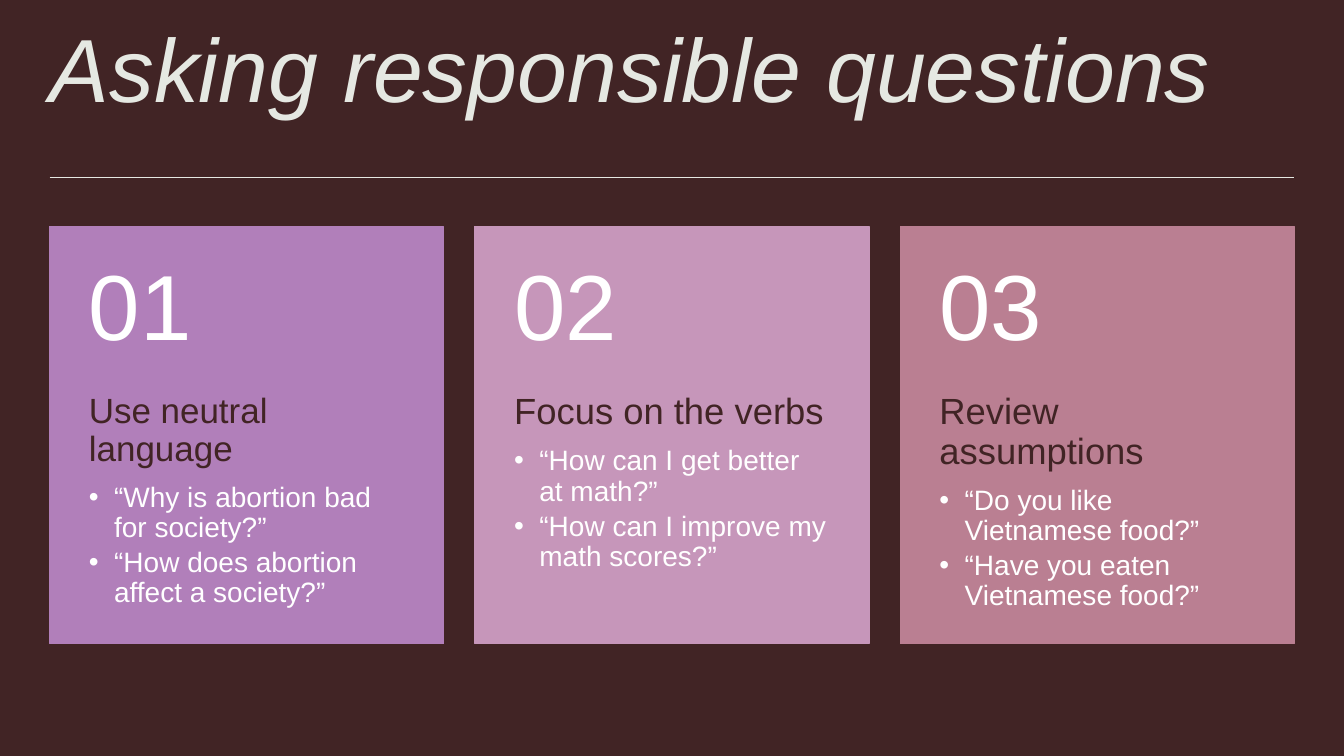
from lxml.etree import SubElement
from pptx import Presentation
from pptx.dml.color import RGBColor
from pptx.enum.shapes import MSO_CONNECTOR, MSO_SHAPE
from pptx.enum.text import MSO_ANCHOR, MSO_AUTO_SIZE, PP_ALIGN
from pptx.oxml.ns import qn
from pptx.util import Pt

# Content
TITLE = "Asking responsible questions"
CARDS = [
    {"number": "01", "heading": "Use neutral language", "heading_size": 25, "fill": "B17FBA",
     "questions": ["“Why is abortion bad for society?”",
                   "“How does abortion affect a society?”"]},
    {"number": "02", "heading": "Focus on the verbs", "heading_size": 26, "fill": "C696BA",
     "questions": ["“How can I get better at math?”",
                   "“How can I improve my math scores?”"]},
    {"number": "03", "heading": "Review assumptions", "heading_size": 26, "fill": "BA7F92",
     "questions": ["“Do you like Vietnamese food?”",
                   "“Have you eaten Vietnamese food?”"]},
]

# Theme
THEME = {"font": "Arial", "dark": "412425", "pale": "E5E8E2", "white": "FFFFFF",
         "title": 64, "number": 66, "question": 20}

# Layout, in points
SLIDE_W, SLIDE_H = 960, 540
LEFT, RIGHT = 35.5, 924.5
TITLE_TOP, TITLE_H, RULE_Y = 18, 78, 126.7
CARD_TOP, CARD_W, CARD_H, NUMBER_H = 162, 281.5, 298, 119
CARD_STEP = (RIGHT - LEFT - CARD_W) / (len(CARDS) - 1)
INSET, BULLET_INDENT = 28, 18


def color(value):
    return RGBColor.from_string(value)


def place(shape, left, top, width, height):
    for name, value in {"left": left, "top": top, "width": width, "height": height}.items():
        setattr(shape, name, Pt(value))


def set_frame(shape, anchor, left=0, top=0, right=0, bottom=0):
    frame = shape.text_frame
    formats = {"word_wrap": True, "auto_size": MSO_AUTO_SIZE.NONE, "vertical_anchor": anchor,
               "margin_left": Pt(left), "margin_top": Pt(top),
               "margin_right": Pt(right), "margin_bottom": Pt(bottom)}
    for name, value in formats.items():
        setattr(frame, name, value)
    return frame


def write(paragraph, text, size, ink, after=0, italic=False, bullet=False):
    spacing = {"alignment": PP_ALIGN.LEFT, "line_spacing": 0.9,
               "space_before": Pt(0), "space_after": Pt(after)}
    for name, value in spacing.items():
        setattr(paragraph, name, value)
    run = paragraph.add_run()
    run.text = text
    look = {"name": THEME["font"], "size": Pt(size), "bold": False, "italic": italic}
    for name, value in look.items():
        setattr(run.font, name, value)
    run.font.color.rgb = color(ink)

    # Bullet and hanging indent
    properties = paragraph._p.get_or_add_pPr()
    indent = Pt(BULLET_INDENT) if bullet else 0
    properties.set("marL", str(indent))
    properties.set("indent", str(-indent))
    if bullet:
        SubElement(properties, qn("a:buFont"), typeface=THEME["font"])
        SubElement(properties, qn("a:buChar"), char="•")
    else:
        SubElement(properties, qn("a:buNone"))


def add_card(slide, body, card, left):
    # Panel, with the list placeholder brought in front of it
    panel = slide.shapes.add_shape(MSO_SHAPE.RECTANGLE, Pt(left), Pt(CARD_TOP),
                                   Pt(CARD_W), Pt(CARD_H))
    panel.shadow.inherit = False
    panel.fill.solid()
    panel.fill.fore_color.rgb = color(card["fill"])
    panel.line.color.rgb = color(card["fill"])
    panel.line.width = Pt(0.75)
    panel.element.addnext(body.element)

    # Heading and questions
    place(body, left, CARD_TOP + NUMBER_H, CARD_W, CARD_H - NUMBER_H)
    frame = set_frame(body, MSO_ANCHOR.TOP, left=INSET, right=INSET, bottom=26)
    write(frame.paragraphs[0], card["heading"], card["heading_size"], THEME["dark"], after=10)
    for question in card["questions"]:
        write(frame.add_paragraph(), question, THEME["question"], THEME["white"],
              after=3.5, bullet=True)

    # Number
    number = slide.shapes.add_textbox(Pt(left), Pt(CARD_TOP), Pt(CARD_W), Pt(NUMBER_H))
    frame = set_frame(number, MSO_ANCHOR.MIDDLE, INSET, 13, INSET, 13)
    write(frame.paragraphs[0], card["number"], THEME["number"], THEME["white"])


def main():
    deck = Presentation()
    deck.slide_width, deck.slide_height = Pt(SLIDE_W), Pt(SLIDE_H)
    slide = deck.slides.add_slide(deck.slide_layouts.get_by_name("Comparison"))
    slide.background.fill.solid()
    slide.background.fill.fore_color.rgb = color(THEME["dark"])
    title, *bodies = slide.placeholders

    # Title
    place(title, LEFT, TITLE_TOP, RIGHT - LEFT, TITLE_H)
    frame = set_frame(title, MSO_ANCHOR.TOP)
    write(frame.paragraphs[0], TITLE, THEME["title"], THEME["pale"], italic=True)

    # Rule under the title
    rule = slide.shapes.add_connector(MSO_CONNECTOR.STRAIGHT, Pt(LEFT), Pt(RULE_Y),
                                      Pt(RIGHT), Pt(RULE_Y))
    rule.line.color.rgb = color(THEME["pale"])
    rule.line.width = Pt(0.5)
    SubElement(rule.element.spPr, qn("a:effectLst"))

    # Cards
    for index, (body, card) in enumerate(zip(bodies, CARDS)):
        add_card(slide, body, card, LEFT + index * CARD_STEP)
    for unused in bodies[len(CARDS):]:
        unused.element.getparent().remove(unused.element)

    deck.save("out.pptx")


if __name__ == "__main__":
    main()
